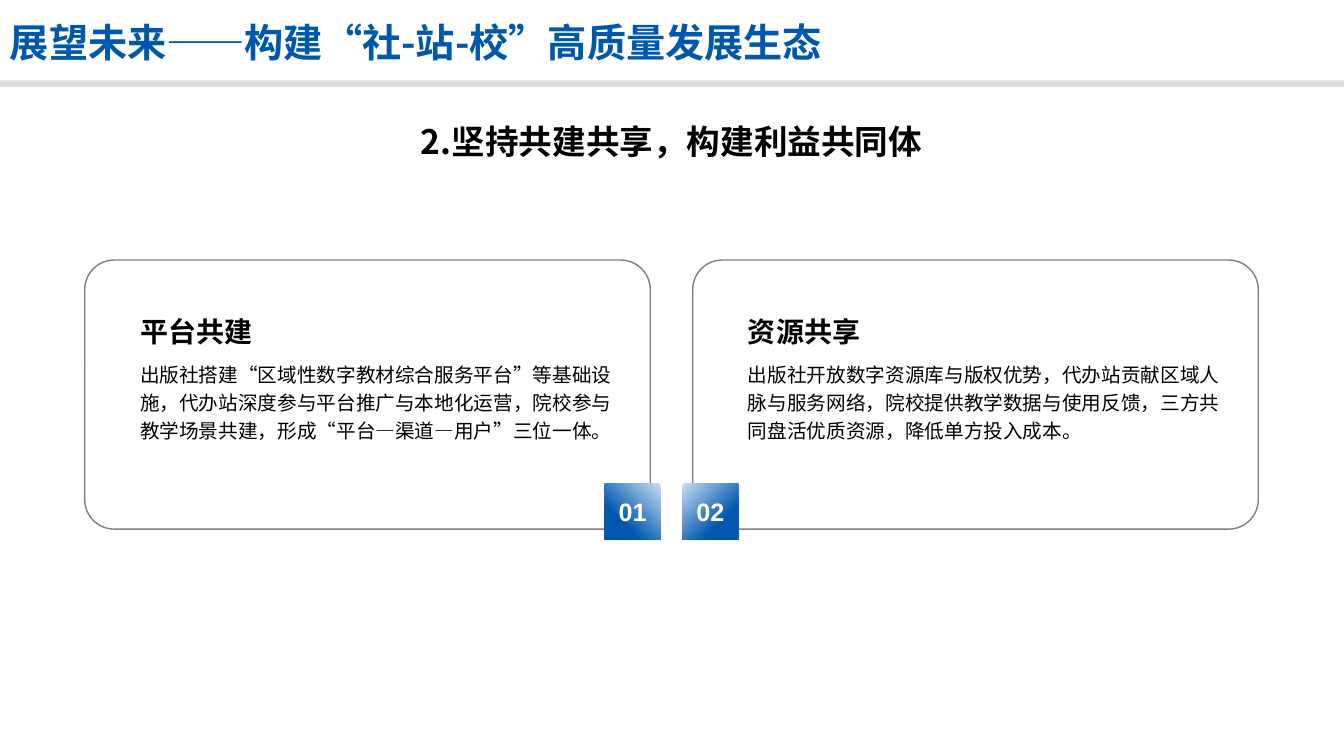
from dataclasses import dataclass

from lxml.etree import SubElement
from pptx import Presentation
from pptx.dml.color import RGBColor
from pptx.enum.shapes import MSO_CONNECTOR, MSO_SHAPE
from pptx.enum.text import MSO_ANCHOR as Anchor, PP_ALIGN as Align
from pptx.oxml.ns import qn
from pptx.util import Inches, Pt


@dataclass(frozen=True)
class Theme:
    """Colours, fonts and type sizes of the slide."""
    title: str = "0058AC"
    ink: str = "000000"
    white: str = "FFFFFF"
    rule: str = "BFBFBF"
    badge_light: str = "C7DDF4"
    badge_dark: str = "0057AE"
    cjk: str = "Noto Sans CJK SC"
    latin: str = "Arial"
    title_size: int = 28
    subtitle_size: int = 24
    heading_size: int = 20
    badge_size: int = 18
    body_size: int = 14


@dataclass(frozen=True)
class Card:
    """One pillar of cooperation with its numbered badge."""
    number: str
    heading: str
    body: str
    left: float
    badge_left: float
    flipped: bool


THEME = Theme()
SLIDE_WIDTH, SLIDE_HEIGHT = 13.33, 7.5
CARD_TOP, CARD_WIDTH, CARD_HEIGHT = 2.58, 5.61, 2.67
FIRST_LEFT, SECOND_LEFT = 0.84, 6.87
BADGE, OVERHANG = 0.55, 0.1
RULE_TOP = 0.83

CARDS = (
    Card("01", "平台共建",
         "出版社搭建“区域性数字教材综合服务平台”等基础设施，代办站深度参与平台推广与本地化运营，"
         "院校参与教学场景共建，形成“平台—渠道—用户”三位一体。",
         FIRST_LEFT, FIRST_LEFT + CARD_WIDTH + OVERHANG - BADGE, True),
    Card("02", "资源共享",
         "出版社开放数字资源库与版权优势，代办站贡献区域人脉与服务网络，"
         "院校提供教学数据与使用反馈，三方共同盘活优质资源，降低单方投入成本。",
         SECOND_LEFT, SECOND_LEFT - OVERHANG, False),
)


def write(box, text: str, *, size: int, color: str = THEME.ink, font: str = THEME.cjk,
          bold: bool = False, align: Align = Align.LEFT, anchor: Anchor = Anchor.TOP,
          spacing: float = 1.0, wrap: bool = True) -> None:
    """Put formatted text into a shape."""
    frame = box.text_frame
    frame.word_wrap = wrap
    frame.vertical_anchor = anchor
    para = frame.paragraphs[0]
    para.alignment = align
    para.line_spacing = spacing
    span = para.add_run()
    span.text = text
    span.font.size = Pt(size)
    span.font.bold = bold
    span.font.color.rgb = RGBColor.from_string(color)
    span.font.name = font
    SubElement(span.font._element, qn("a:ea")).set("typeface", font)


def add_text(shapes, left: float, top: float, width: float, height: float,
             text: str, **style) -> None:
    """Add a text box."""
    box = shapes.add_textbox(Inches(left), Inches(top), Inches(width), Inches(height))
    write(box, text, **style)


def style_line(line, color: str, width: float) -> None:
    """Give a line its width and a half-transparent colour."""
    line.width = Pt(width)
    line.color.rgb = RGBColor.from_string(color)
    tint = line._ln.find(".//" + qn("a:srgbClr"))
    SubElement(tint, qn("a:alpha")).set("val", "50000")


def add_preset(shapes, kind: MSO_SHAPE, left: float, top: float, width: float,
               height: float, flipped: bool):
    """Add a shadowless preset shape, mirrored on request."""
    shape = shapes.add_shape(kind, Inches(left), Inches(top), Inches(width), Inches(height))
    shape.shadow.inherit = False
    if flipped:
        shape._element.spPr.get_or_add_xfrm().set("flipH", "1")
    return shape


def add_badge(shapes, card: Card) -> None:
    """Add the gradient number square at the inner corner of a card."""
    top = CARD_TOP + CARD_HEIGHT + OVERHANG - BADGE
    badge = add_preset(shapes, MSO_SHAPE.RECTANGLE, card.badge_left, top,
                       BADGE, BADGE, card.flipped)
    badge.line.fill.background()
    badge.fill.gradient()
    badge.fill.gradient_angle = 315
    stops = ((0, THEME.badge_light), (0.7, THEME.badge_dark))
    for stop, (position, color) in zip(badge.fill.gradient_stops, stops):
        stop.position = position
        stop.color.rgb = RGBColor.from_string(color)
    write(badge, card.number, size=THEME.badge_size, color=THEME.white, font=THEME.latin,
          bold=True, align=Align.CENTER, anchor=Anchor.MIDDLE, wrap=False)


def add_card(page, card: Card) -> None:
    """Add one card as a group of frame, texts and badge."""
    shapes = page.shapes.add_group_shape().shapes
    frame = add_preset(shapes, MSO_SHAPE.ROUNDED_RECTANGLE, card.left, CARD_TOP,
                       CARD_WIDTH, CARD_HEIGHT, card.flipped)
    frame.adjustments[0] = 0.11
    frame.fill.background()
    style_line(frame.line, THEME.ink, 1)
    text_left = card.left + 0.45
    add_text(shapes, text_left, 2.66, 4.91, 0.84, card.heading,
             size=THEME.heading_size, bold=True, anchor=Anchor.BOTTOM)
    add_text(shapes, text_left, 3.5, 4.91, 1.59, card.body,
             size=THEME.body_size, spacing=1.2)
    add_badge(shapes, card)


def add_header(page) -> None:
    """Add the subtitle, the title and the rule below it."""
    add_text(page.shapes, 0.72, 1.15, 11.88, 0.78, "2.坚持共建共享，构建利益共同体",
             size=THEME.subtitle_size, bold=True, align=Align.CENTER)
    add_text(page.shapes, 0, 0, 8.79, RULE_TOP, "展望未来——构建“社-站-校”高质量发展生态",
             size=THEME.title_size, color=THEME.title, bold=True, anchor=Anchor.MIDDLE)
    rule = page.shapes.add_connector(MSO_CONNECTOR.STRAIGHT, Inches(0), Inches(RULE_TOP),
                                     Inches(SLIDE_WIDTH), Inches(RULE_TOP))
    style_line(rule.line, THEME.rule, 4.75)
    SubElement(rule._element.spPr, qn("a:effectLst"))


def main() -> None:
    """Build and save the deck."""
    deck = Presentation()
    deck.slide_width = Inches(SLIDE_WIDTH)
    deck.slide_height = Inches(SLIDE_HEIGHT)
    page = deck.slides.add_slide(deck.slide_layouts[6])
    add_header(page)
    for card in CARDS:
        add_card(page, card)
    deck.save("out.pptx")


if __name__ == "__main__":
    main()
